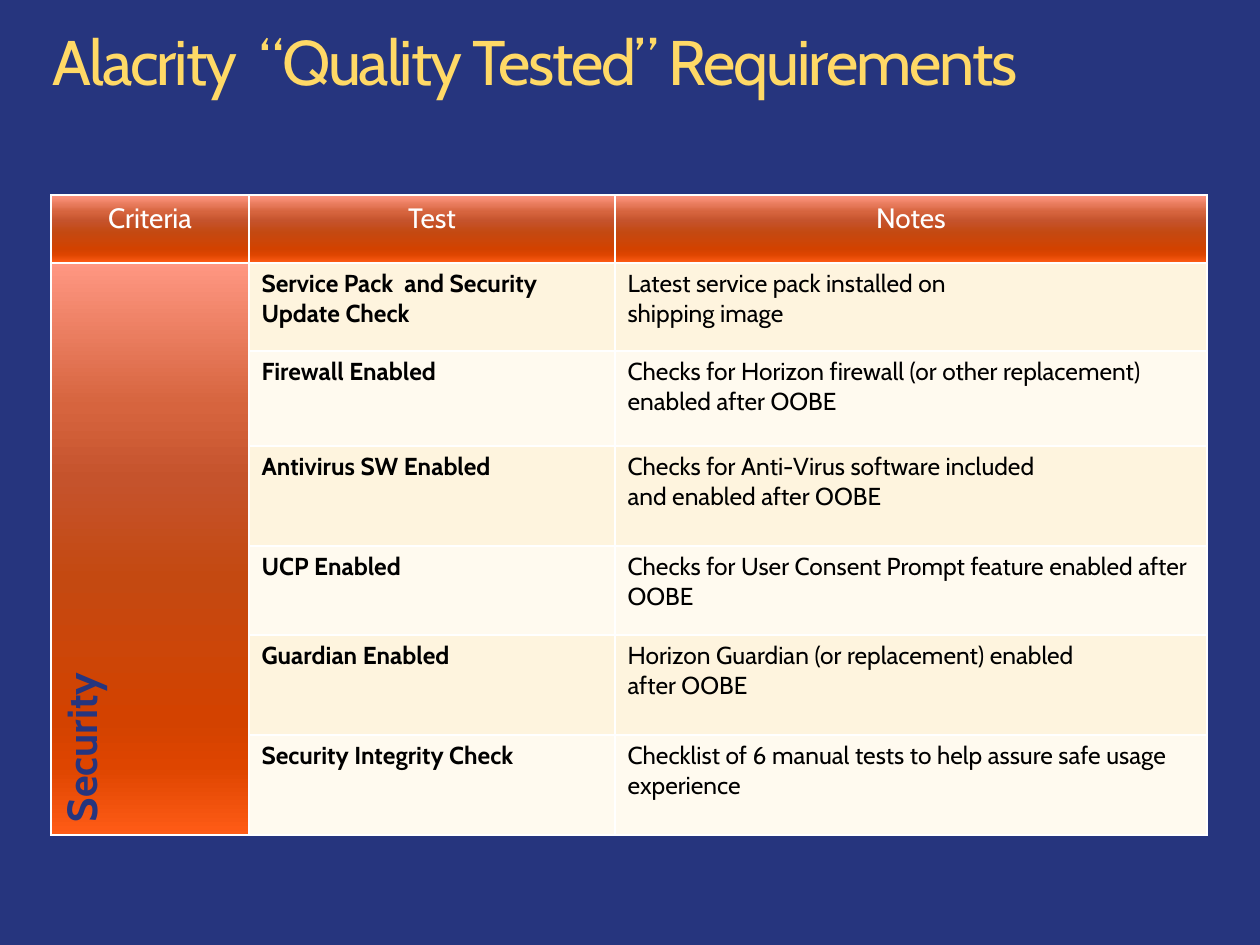
from dataclasses import dataclass

from lxml.etree import SubElement
from pptx import Presentation
from pptx.dml.color import RGBColor as Rgb
from pptx.enum.text import MSO_ANCHOR as Anchor, MSO_AUTO_SIZE as AutoSize, PP_ALIGN as Align
from pptx.oxml.ns import qn
from pptx.util import Emu, Pt


@dataclass(frozen=True)
class Theme:
    font: str = "Cabin"
    background: str = "26357E"
    title: str = "FFD966"
    header: str = "FFFFFF"
    body: str = "000000"
    border: str = "FFFFFF"
    bands: tuple = ("FEF4DE", "FFFAEF")
    orange: tuple = ((0, "FF9782"), (25, "D6643E"), (38, "C5532C"), (55, "C44911"),
                     (80, "D34200"), (88, "DE4500"), (100, "FF5C16"))
    title_size: int = 36
    header_size: int = 16
    criteria_size: int = 24
    body_size: int = 14


THEME = Theme()
SLIDE_SIZE = (1260, 945)
TITLE_BOX = (53, 31, 1154, 69)
TABLE_BOX = (51, 195, 1156, 640)
COLUMNS = (198, 366, 592)
ROWS = (68, 88, 95, 100, 89, 100, 100)
TITLE = "Alacrity  “Quality Tested” Requirements"
HEADINGS = ("Criteria", "Test", "Notes")
CRITERIA = "Security"
TESTS = (
    ("Service Pack  and Security Update Check",
     "Latest service pack installed on\vshipping image"),
    ("Firewall Enabled",
     "Checks for Horizon firewall (or other replacement) enabled after OOBE"),
    ("Antivirus SW Enabled",
     "Checks for Anti-Virus software included\vand enabled after OOBE"),
    ("UCP Enabled",
     "Checks for User Consent Prompt feature enabled after OOBE"),
    ("Guardian Enabled",
     "Horizon Guardian (or replacement) enabled\vafter OOBE"),
    ("Security Integrity Check",
     "Checklist of 6 manual tests to help assure safe usage experience"),
)


def px(length):
    return Emu(round(length * 914400 / 126))


def style_runs(paragraph, size, color, bold=False):
    for run in paragraph.runs:
        run.font.name = THEME.font
        run.font.size = Pt(size)
        run.font.bold = bold
        run.font.color.rgb = Rgb.from_string(color)


def add_color(parent, color):
    SubElement(parent, qn("a:srgbClr"), val=color)


def add_borders(cell):
    properties = cell._tc.get_or_add_tcPr()
    for side in "LRTB":
        line = SubElement(properties, qn(f"a:ln{side}"), w=str(Pt(1)))
        add_color(SubElement(line, qn("a:solidFill")), THEME.border)


def fill_orange(cell):
    gradient = SubElement(cell._tc.get_or_add_tcPr(), qn("a:gradFill"), rotWithShape="1")
    stops = SubElement(gradient, qn("a:gsLst"))
    for percent, color in THEME.orange:
        add_color(SubElement(stops, qn("a:gs"), pos=str(percent * 1000)), color)
    SubElement(gradient, qn("a:lin"), ang="5400000", scaled="0")


def fill_band(cell, color):
    cell.fill.solid()
    cell.fill.fore_color.rgb = Rgb.from_string(color)


def write_cell(cell, text, size, color, bold=False, align=Align.LEFT):
    cell.text_frame.text = text
    paragraph = cell.text_frame.paragraphs[0]
    paragraph.alignment = align
    style_runs(paragraph, size, color, bold)


def place_title(slide, box):
    title = slide.shapes.title
    title.left, title.top, title.width, title.height = map(px, box)
    frame = title.text_frame
    frame.margin_left = frame.margin_top = frame.margin_right = frame.margin_bottom = 0
    frame.word_wrap = True
    frame.auto_size = AutoSize.NONE
    frame.vertical_anchor = Anchor.TOP
    frame.text = TITLE
    heading = frame.paragraphs[0]
    heading.alignment = Align.LEFT
    heading.line_spacing = 0.9
    style_runs(heading, THEME.title_size, THEME.title)
    for run in heading.runs:
        run.font._element.set("spc", "-120")


def place_requirements(slide, box):
    table = slide.shapes.add_table(len(ROWS), len(COLUMNS), *map(px, box)).table
    table.first_row = table.horz_banding = False
    for column, width in zip(table.columns, COLUMNS):
        column.width = px(width)
    for row, height in zip(table.rows, ROWS):
        row.height = px(height)

    for column, heading in enumerate(HEADINGS):
        cell = table.cell(0, column)
        add_borders(cell)
        fill_orange(cell)
        write_cell(cell, heading, THEME.header_size, THEME.header, align=Align.CENTER)

    criteria = table.cell(1, 0)
    criteria.merge(table.cell(len(TESTS), 0))
    add_borders(criteria)
    fill_orange(criteria)
    write_cell(criteria, CRITERIA, THEME.criteria_size, THEME.background, bold=True)
    criteria.vertical_anchor = Anchor.MIDDLE
    criteria._tc.get_or_add_tcPr().set("vert", "vert270")

    for row, test in enumerate(TESTS, start=1):
        for column, text in enumerate(test, start=1):
            cell = table.cell(row, column)
            add_borders(cell)
            fill_band(cell, THEME.bands[(row - 1) % 2])
            write_cell(cell, text, THEME.body_size, THEME.body, bold=column == 1)


def main():
    deck = Presentation()
    deck.slide_width, deck.slide_height = map(px, SLIDE_SIZE)
    slide = deck.slides.add_slide(deck.slide_layouts[5])
    slide.background.fill.solid()
    slide.background.fill.fore_color.rgb = Rgb.from_string(THEME.background)
    place_title(slide, TITLE_BOX)
    place_requirements(slide, TABLE_BOX)
    deck.save("out.pptx")


if __name__ == "__main__":
    main()
